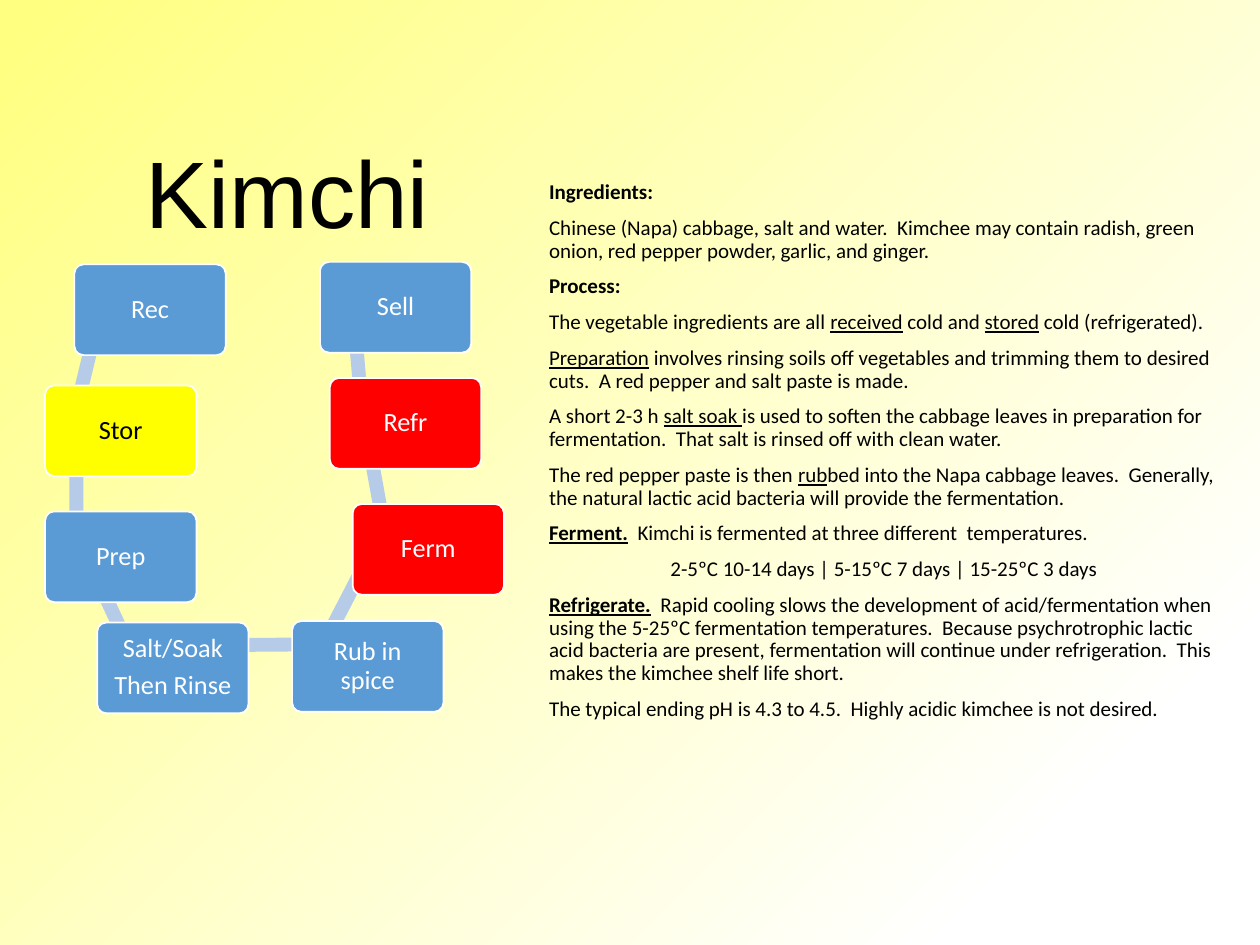
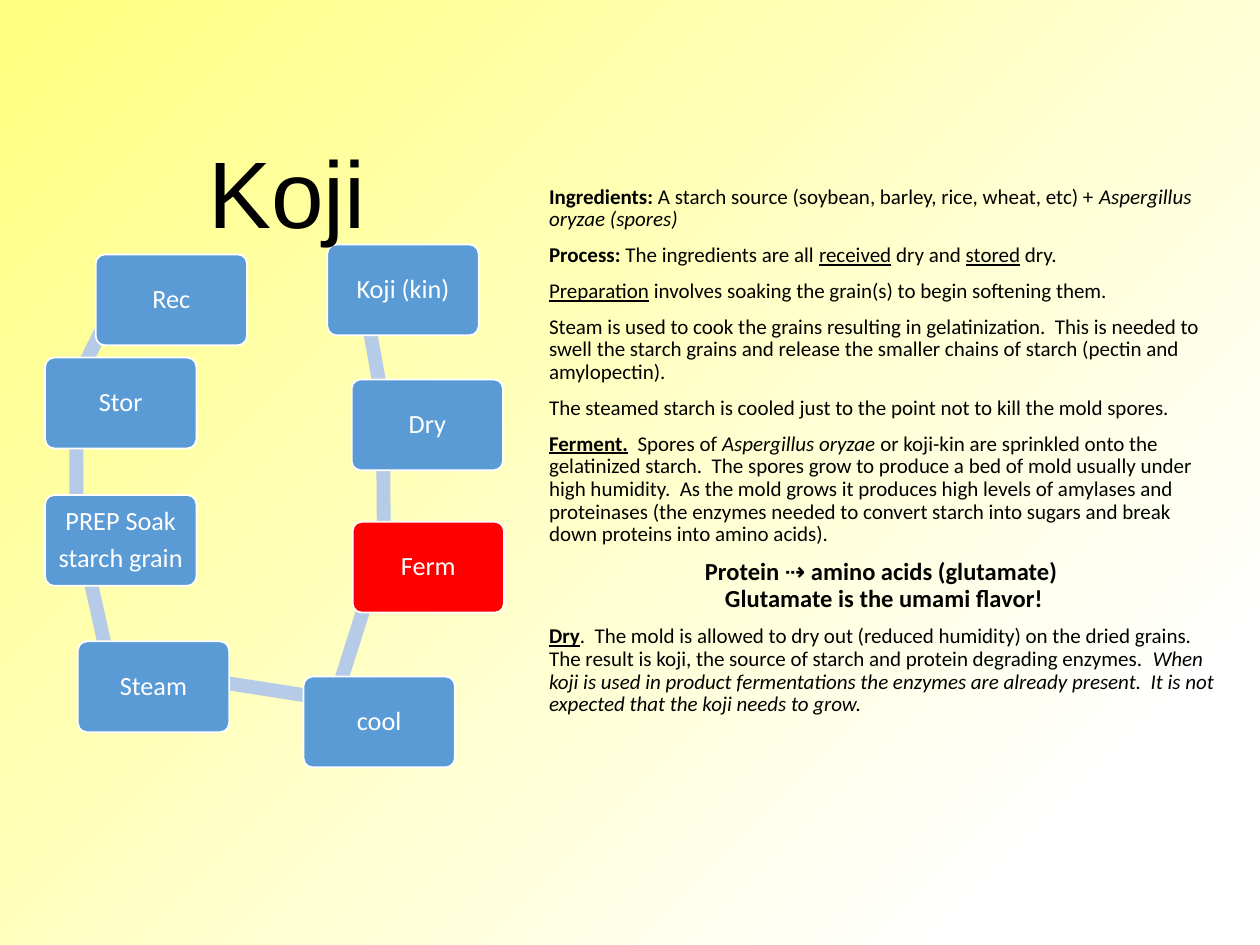
from dataclasses import dataclass
from math import atan2, degrees, hypot

from pptx import Presentation
from pptx.dml.color import RGBColor
from pptx.enum.shapes import MSO_SHAPE
from pptx.enum.text import MSO_ANCHOR, MSO_AUTO_SIZE, PP_ALIGN
from pptx.util import Cm, Pt


@dataclass(frozen=True)
class Theme:
    glow: str = "FFFF80"
    white: str = "FFFFFF"
    black: str = "000000"
    blue: str = "5B9BD5"
    red: str = "FF0000"
    yellow: str = "FFFF00"
    link: str = "B5CBE7"
    head: str = "Arial"
    text: str = "Calibri"
    title: int = 54
    step: int = 15
    body: int = 12
    key: int = 14


THEME = Theme()

# Steps: label lines, left and top in cm, fill.
# Body: paragraphs of plain strings or (text, marks), marks being b, i, u;
# a paragraph may sit in a dict that centres it or changes its size.
SLIDES = [
    {
        "title": "Kimchi",
        "width": 6.27,
        "steps": [
            (["Rec"], 1.5, 5.33, THEME.blue),
            (["Stor"], 0.91, 7.77, THEME.yellow),
            (["Prep"], 0.91, 10.31, THEME.blue),
            (["Salt/Soak", "Then Rinse"], 1.96, 12.55, THEME.blue),
            (["Rub in spice"], 5.89, 12.52, THEME.blue),
            (["Ferm"], 7.11, 10.16, THEME.red),
            (["Refr"], 6.65, 7.62, THEME.red),
            (["Sell"], 6.45, 5.28, THEME.blue),
        ],
        "body": [
            [("Ingredients:", "b")],
            ["Chinese (Napa) cabbage, salt and water.  Kimchee may contain "
             "radish, green onion, red pepper powder, garlic, and ginger."],
            [("Process:", "b")],
            ["The vegetable ingredients are all ", ("received", "u"),
             " cold and ", ("stored", "u"), " cold (refrigerated)."],
            [("Preparation", "u"),
             " involves rinsing soils off vegetables and trimming them to "
             "desired cuts.  A red pepper and salt paste is made."],
            ["A short 2-3 h ", ("salt soak ", "u"),
             "is used to soften the cabbage leaves in preparation for "
             "fermentation.  That salt is rinsed off with clean water."],
            ["The red pepper paste is then ", ("rub", "u"),
             "bed into the Napa cabbage leaves.  Generally, the natural "
             "lactic acid bacteria will provide the fermentation."],
            [("Ferment.", "bu"),
             "  Kimchi is fermented at three different  temperatures."],
            {"runs": ["2-5ºC 10-14 days | 5-15ºC 7 days | 15-25ºC 3 days"],
             "size": THEME.body},
            [("Refrigerate.", "bu"),
             "  Rapid cooling slows the development of acid/fermentation "
             "when using the 5-25ºC fermentation temperatures.  Because "
             "psychrotrophic lactic acid bacteria are present, fermentation "
             "will continue under refrigeration.  This makes the kimchee "
             "shelf life short."],
            ["The typical ending pH is 4.3 to 4.5.  Highly acidic kimchee "
             "is not desired."],
        ],
    },
    {
        "title": "Koji",
        "width": 3.71,
        "steps": [
            (["Rec"], 1.93, 5.13, THEME.blue),
            (["Stor"], 0.91, 7.21, THEME.blue),
            (["PREP Soak", "starch grain"], 0.91, 9.98, THEME.blue),
            (["Steam"], 1.57, 12.93, THEME.blue),
            (["cool"], 6.12, 13.64, THEME.blue),
            (["Ferm"], 7.11, 10.52, THEME.red),
            (["Dry"], 7.09, 7.65, THEME.blue),
            (["Koji (kin)"], 6.6, 4.93, THEME.blue),
        ],
        "body": [
            [("Ingredients: ", "b"),
             "A starch source (soybean, barley, rice, wheat, etc) + ",
             ("Aspergillus oryzae (spores)", "i")],
            [("Process:", "b"), " The ingredients are all ",
             ("received", "u"), " dry and ", ("stored", "u"), " dry."],
            [("Preparation", "u"),
             " involves soaking the grain(s) to begin softening them."],
            ["Steam is used to cook the grains resulting in gelatinization.  "
             "This is needed to swell the starch grains and release the "
             "smaller chains of starch (pectin and amylopectin)."],
            ["The steamed starch is cooled just to the point not to kill the "
             "mold spores."],
            [("Ferment.", "bu"), "  Spores of ", ("Aspergillus oryzae", "i"),
             " or koji-kin are sprinkled onto the gelatinized starch.  The "
             "spores grow to produce a bed of mold usually under high "
             "humidity.  As the mold grows it produces high levels of "
             "amylases and proteinases (the enzymes needed to convert starch "
             "into sugars and break down proteins into amino acids)."],
            {"runs": [("Protein ⇢ amino acids (glutamate) \n"
                       "Glutamate is the umami flavor!", "b")],
             "size": THEME.key},
            [("Dry", "bu"),
             ".  The mold is allowed to dry out (reduced humidity) on the "
             "dried grains. The result is koji, the source of starch and "
             "protein degrading enzymes.  ",
             ("When koji is used in product fermentations the enzymes are "
              "already present.  It is not expected that the koji needs to "
              "grow.", "i")],
        ],
    },
]

STEP_W, STEP_H = 3.05, 1.83
LINK_H = 0.28
LINK_X, LINK_Y = 0.63, 0.47  # where links meet inside a step
MID_X = 5.79  # centre line of the title


def rgb(code):
    return RGBColor.from_string(code)


def style(para, size, color=THEME.black, face=THEME.text):
    font = para.font
    font.size, font.name = Pt(size), face
    font.color.rgb = rgb(color)


def paint(shape, fill, line=None):
    shape.shadow.inherit = False
    shape.fill.solid()
    shape.fill.fore_color.rgb = rgb(fill)
    if line:
        shape.line.color.rgb = rgb(line)
        shape.line.width = Pt(1)
    else:
        shape.line.fill.background()


def paras(frame, items):
    """Yield a paragraph of the frame for each item, reusing the first."""
    for num, item in enumerate(items):
        yield frame.add_paragraph() if num else frame.paragraphs[0], item


def add_link(slide, start, end):
    (_, x1, y1, _), (_, x2, y2, _) = start, end
    size = hypot(x2 - x1, y2 - y1)
    left = (x1 + x2) / 2 + LINK_X - size / 2
    top = (y1 + y2) / 2 + LINK_Y - LINK_H / 2
    bar = slide.shapes.add_shape(MSO_SHAPE.RECTANGLE, Cm(left), Cm(top),
                                 Cm(size), Cm(LINK_H))
    bar.rotation = degrees(atan2(y2 - y1, x2 - x1))
    paint(bar, THEME.link)


def add_step(slide, lines, left, top, fill):
    box = slide.shapes.add_shape(MSO_SHAPE.ROUNDED_RECTANGLE, Cm(left),
                                 Cm(top), Cm(STEP_W), Cm(STEP_H))
    box.adjustments[0] = 0.1
    paint(box, fill, THEME.white)
    frame = box.text_frame
    frame.word_wrap = True
    frame.vertical_anchor = MSO_ANCHOR.MIDDLE
    frame.margin_left = frame.margin_right = Cm(0.2)
    frame.margin_top = frame.margin_bottom = Cm(0.2)
    color = THEME.black if fill == THEME.yellow else THEME.white
    for para, line in paras(frame, lines):
        para.text = line
        para.alignment = PP_ALIGN.CENTER
        para.line_spacing = 0.9
        para.space_after = Pt(5)
        style(para, THEME.step, color)


def add_run(para, text, marks=""):
    for num, line in enumerate(text.split("\n")):
        if num:
            para.add_line_break()
        run = para.add_run()
        run.text = line
        if "b" in marks:
            run.font.bold = True
        if "i" in marks:
            run.font.italic = True
        if "u" in marks:
            run.font.underline = True


def add_body(slide, items):
    box = slide.shapes.add_textbox(Cm(10.82), Cm(2.72), Cm(14), Cm(12.75))
    frame = box.text_frame
    frame.word_wrap = True
    frame.vertical_anchor = MSO_ANCHOR.MIDDLE
    for num, (para, item) in enumerate(paras(frame, items)):
        runs, size = item, THEME.body
        if isinstance(item, dict):
            runs, size = item["runs"], item["size"]
            para.alignment = PP_ALIGN.CENTER
        para.line_spacing = 0.9
        if num:
            para.space_before = Pt(7.5)
        style(para, size)
        for run in runs:
            add_run(para, *([run] if isinstance(run, str) else run))


def add_title(slide, text, width):
    box = slide.shapes.add_textbox(Cm(MID_X - width / 2), Cm(2.57),
                                   Cm(width), Cm(2.57))
    frame = box.text_frame
    frame.word_wrap = False
    frame.auto_size = MSO_AUTO_SIZE.SHAPE_TO_FIT_TEXT
    para = frame.paragraphs[0]
    para.text = text
    para.alignment = PP_ALIGN.CENTER
    style(para, THEME.title, face=THEME.head)


def set_back(master):
    fill = master.background.fill
    fill.gradient()
    fill.gradient_angle = 315
    stops = zip(fill.gradient_stops, (0.01, 0.86), (THEME.glow, THEME.white))
    for stop, place, color in stops:
        stop.position = place
        stop.color.rgb = rgb(color)


def main():
    deck = Presentation()
    deck.slide_width, deck.slide_height = Cm(25.4), Cm(19.05)
    set_back(deck.slide_master)
    for data in SLIDES:
        slide = deck.slides.add_slide(deck.slide_layouts[6])
        add_body(slide, data["body"])
        steps = data["steps"]
        for step, after in zip(steps, steps[1:] + [None]):
            if after:
                add_link(slide, step, after)
            add_step(slide, *step)
        add_title(slide, data["title"], data["width"])
    deck.save("out.pptx")


if __name__ == "__main__":
    main()
